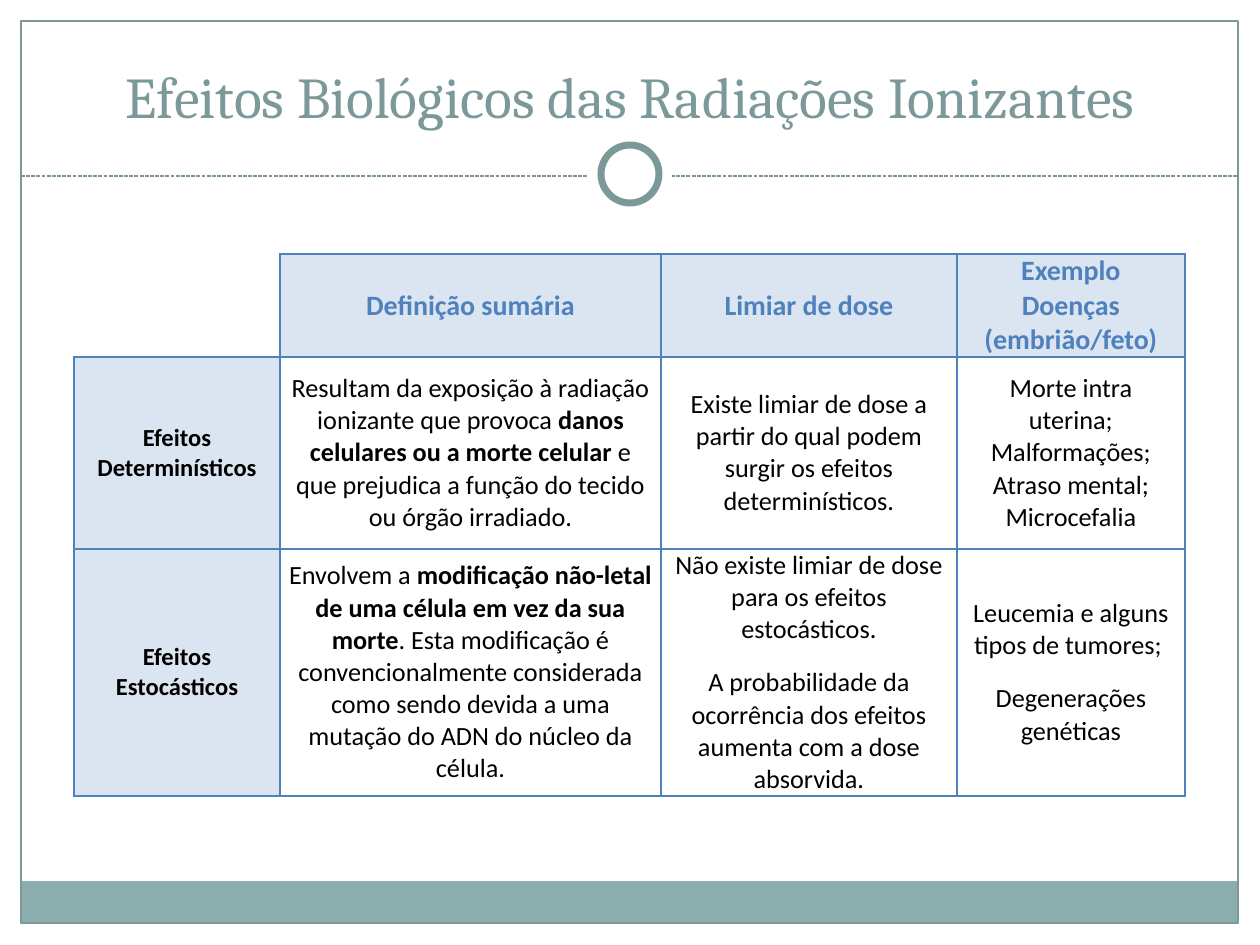
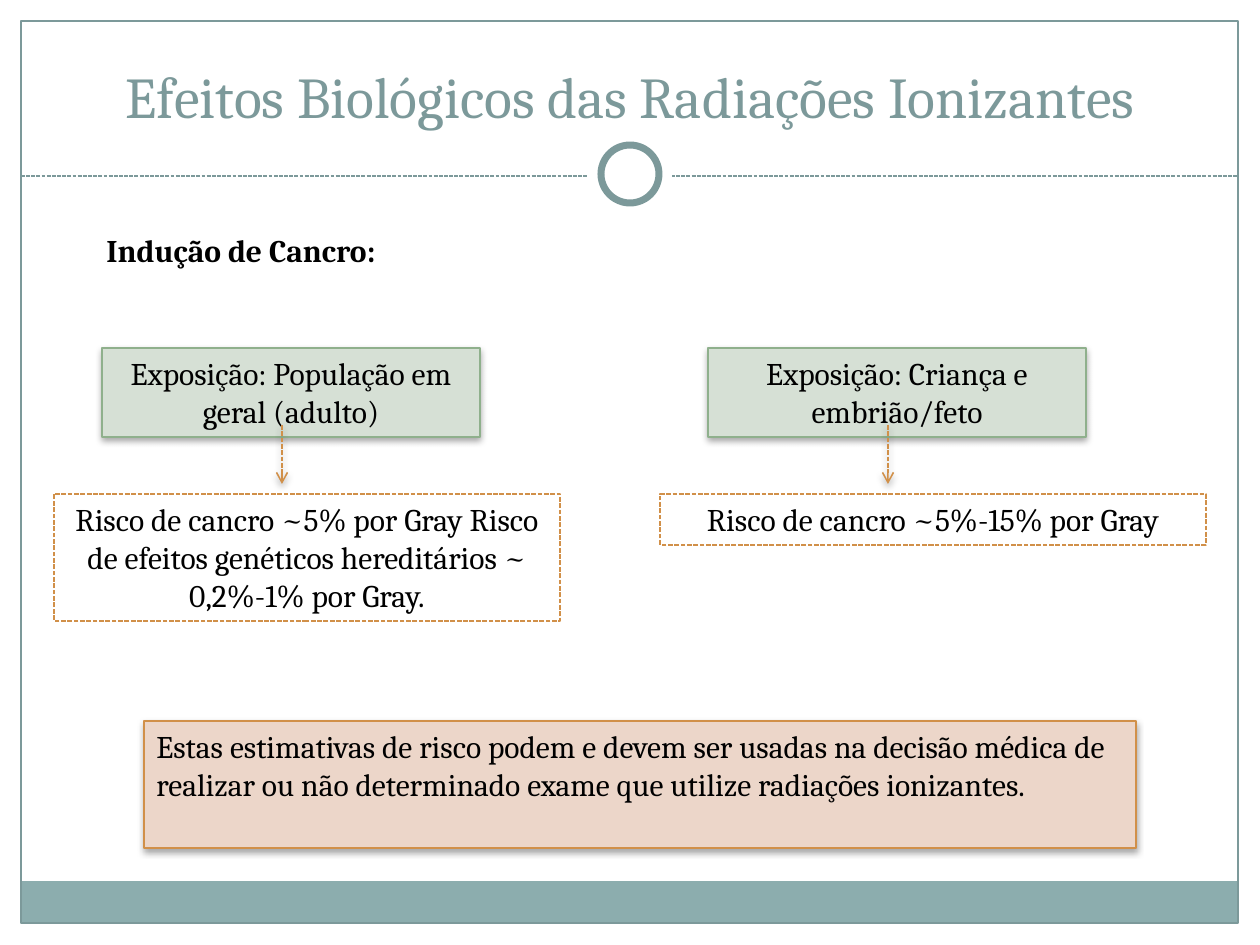
"""Build two slides on the biological effects of ionizing radiation."""
from dataclasses import dataclass
from typing import Any, NamedTuple

from lxml import etree
from pptx import Presentation
from pptx import util as u
from pptx.dml import color
from pptx.enum import dml, shapes, text
from pptx.oxml import ns

SCALE = 914400 / 126
TEAL, BAND, WHITE, BLACK = "7C999A", "8CADAE", "FFFFFF", "000000"
BLUE, PALE_BLUE = "4F81BD", "DBE5F1"
GREEN, PALE_GREEN = "8FB08C", "D6E0D5"
ORANGE, PALE_ORANGE = "D19049", "ECD6C9"
TITLE = "Efeitos Biológicos das Radiações Ionizantes"
CENTER, LEFT = text.PP_ALIGN.CENTER, text.PP_ALIGN.LEFT
MIDDLE, TOP, BOTTOM = text.MSO_ANCHOR.MIDDLE, text.MSO_ANCHOR.TOP, text.MSO_ANCHOR.BOTTOM


class Span(NamedTuple):
    words: str
    bold: bool = False


class Area(NamedTuple):
    left: int
    top: int
    width: int
    height: int


@dataclass(frozen=True)
class Type:
    size: int
    name: str = "Cambria"
    ink: str = BLACK
    align: Any = LEFT
    space: int = 0


@dataclass(frozen=True)
class Stroke:
    ink: str
    width: float = 0.75
    dashed: bool = False


@dataclass(frozen=True)
class Look:
    fill: str | None = None
    stroke: Stroke | None = None
    shadow: bool = False


class Exposure(NamedTuple):
    group: str
    risk: str
    risk_width: int
    risk_height: int


TITLE_TYPE = Type(33, ink=TEAL, align=CENTER)
BODY = Type(18)
BODY_CENTER = Type(18, align=CENTER)
HEADER = Type(16, "Calibri", BLUE, CENTER, 6)
LABEL = Type(14, "Calibri", align=CENTER, space=6)
CELL = Type(15, "Calibri", align=CENTER, space=6)
DASHED = Stroke(ORANGE, 0.9, True)
GROUP_LOOK = Look(PALE_GREEN, Stroke(GREEN), True)
RISK_LOOK = Look(WHITE, DASHED)
NOTE_LOOK = Look(PALE_ORANGE, Stroke(ORANGE), True)

COLUMNS = (206, 381, 296, 228)
ROWS = (103, 192, 247)
EFFECTS = [
    [
        [],
        [[Span("Definição sumária", True)]],
        [[Span("Limiar de dose", True)]],
        [[Span("Exemplo\nDoenças\n(embrião/feto)", True)]],
    ],
    [
        [[Span("Efeitos Determinísticos", True)]],
        [[
            Span("Resultam da exposição à radiação ionizante que provoca "),
            Span("danos celulares ou a morte celular", True),
            Span(" e que prejudica a função do tecido ou órgão irradiado."),
        ]],
        [[Span("Existe limiar de dose a partir do qual podem surgir os efeitos determinísticos.")]],
        [[Span("Morte intra uterina;\nMalformações;\nAtraso mental;\nMicrocefalia")]],
    ],
    [
        [[Span("Efeitos Estocásticos", True)]],
        [[
            Span("Envolvem a "),
            Span("modificação não-letal de uma célula em vez da sua morte", True),
            Span(". Esta modificação é convencionalmente considerada como sendo "
                 "devida a uma mutação do ADN do núcleo da célula."),
        ]],
        [
            [Span("Não existe limiar de dose para os efeitos estocásticos.")],
            [Span("A probabilidade da ocorrência dos efeitos aumenta com a dose absorvida.")],
        ],
        [
            [Span("Leucemia e alguns tipos de tumores; ")],
            [Span("Degenerações genéticas")],
        ],
    ],
]
EXPOSURES = [
    Exposure(
        "Exposição: População em geral (adulto)",
        "Risco de cancro ~5% por Gray Risco de efeitos genéticos hereditários ~ 0,2%-1% por Gray.",
        506, 127,
    ),
    Exposure("Exposição: Criança e embrião/feto", "Risco de cancro ~5%-15% por Gray", 546, 51),
]
EXPOSURE_STEP = 606


def px(length: int) -> u.Emu:
    """Turn pixels into EMU."""
    return u.Emu(round(length * SCALE))


def rgb(value: str) -> color.RGBColor:
    """Turn a hex string into a colour."""
    return color.RGBColor.from_string(value)


def assign(target: Any, values: dict[str, Any]) -> None:
    """Set each named attribute of the target."""
    for name, value in values.items():
        setattr(target, name, value)


def add_node(parent: Any, tag: str, **values: Any) -> Any:
    """Append a drawing element with its attributes."""
    attributes = {name: str(value) for name, value in values.items()}
    return etree.SubElement(parent, ns.qn(tag), attributes)


def write(frame: Any, paragraphs: list[list[Span]], style: Type) -> None:
    """Fill a text frame with styled paragraphs."""
    for index, spans in enumerate(paragraphs):
        para = frame.add_paragraph() if index else frame.paragraphs[0]
        assign(para, {
            "alignment": style.align,
            "space_before": u.Pt(style.space),
            "space_after": u.Pt(style.space),
        })
        for span in spans:
            for number, line in enumerate(span.words.split("\n")):
                if number:
                    para.add_line_break()
                run = para.add_run()
                run.text = line
                assign(run.font, {"size": u.Pt(style.size), "name": style.name, "bold": span.bold})
                run.font.color.rgb = rgb(style.ink)


def apply_stroke(line: Any, stroke: Stroke) -> None:
    """Draw a line format."""
    line.color.rgb = rgb(stroke.ink)
    line.width = u.Pt(stroke.width)
    if stroke.dashed:
        line.dash_style = dml.MSO_LINE.SQUARE_DOT


def add_shadow(effects: Any) -> None:
    """Add a soft shadow below the element."""
    shadow = add_node(effects, "a:outerShdw", blurRad=u.Pt(4), dist=u.Pt(2),
                      dir=5400000, rotWithShape=0)
    add_node(add_node(shadow, "a:srgbClr", val=BLACK), "a:alpha", val=35000)


def add_box(page: Any, area: Area, look: Look,
            kind: Any = shapes.MSO_SHAPE.RECTANGLE) -> Any:
    """Add a preset shape."""
    box = page.shapes.add_shape(kind, *map(px, area))
    if look.fill:
        box.fill.solid()
        box.fill.fore_color.rgb = rgb(look.fill)
    else:
        box.fill.background()
    if look.stroke:
        apply_stroke(box.line, look.stroke)
    else:
        box.line.fill.background()
    box.shadow.inherit = False
    if look.shadow:
        add_shadow(box.element.spPr.find(ns.qn("a:effectLst")))
    return box


def add_text(box: Any, words: str, style: Type, bold: bool = False, anchor: Any = TOP) -> None:
    """Write one wrapped paragraph into a box."""
    assign(box.text_frame, {"word_wrap": True, "vertical_anchor": anchor})
    write(box.text_frame, [[Span(words, bold)]], style)


def add_line(page: Any, start: tuple[int, int], end: tuple[int, int],
             stroke: Stroke, arrow: bool = False) -> None:
    """Add a straight line, or a shadowed arrow."""
    line = page.shapes.add_connector(shapes.MSO_CONNECTOR.STRAIGHT, *map(px, start + end))
    apply_stroke(line.line, stroke)
    effects = add_node(line.element.spPr, "a:effectLst")
    if arrow:
        add_node(line.element.spPr.find(ns.qn("a:ln")), "a:tailEnd", type="arrow")
        add_shadow(effects)


def add_page(deck: Any) -> Any:
    """Add a slide with the shared frame, ring and title."""
    page = deck.slides.add_slide(deck.slide_layouts[6])
    oval = shapes.MSO_SHAPE.OVAL
    add_box(page, Area(21, 881, 1217, 43), Look(BAND))
    add_box(page, Area(21, 21, 1217, 902), Look(stroke=Stroke(TEAL)))
    add_line(page, (21, 176), (1238, 176), Stroke(TEAL, dashed=True))
    add_box(page, Area(588, 132, 84, 84), Look(WHITE), oval)
    add_box(page, Area(601, 145, 58, 58), Look(WHITE, Stroke(TEAL, 4)), oval)
    title = page.shapes.add_textbox(*map(px, Area(42, 31, 1176, 105)))
    add_text(title, TITLE, TITLE_TYPE, anchor=BOTTOM)
    return page


def format_cell(cell: Any, row: int, column: int) -> None:
    """Set the borders, fill, margins and words of one cell."""
    for side in "LRTB" if row or column else "RB":
        border = add_node(cell._tc.get_or_add_tcPr(), f"a:ln{side}", w=u.Pt(1))
        add_node(add_node(border, "a:solidFill"), "a:srgbClr", val=BLUE)
    if (row == 0) != (column == 0):
        cell.fill.solid()
        cell.fill.fore_color.rgb = rgb(PALE_BLUE)
    else:
        cell.fill.background()
    assign(cell, {
        "vertical_anchor": MIDDLE,
        "margin_left": px(9), "margin_right": px(9),
        "margin_top": 0, "margin_bottom": 0,
    })
    style = HEADER if row == 0 else LABEL if column == 0 else CELL
    write(cell.text_frame, EFFECTS[row][column], style)


def add_effects_page(deck: Any) -> None:
    """Add the table that compares the two kinds of effect."""
    page = add_page(deck)
    area = Area(74, 254, sum(COLUMNS), sum(ROWS))
    table = page.shapes.add_table(len(ROWS), len(COLUMNS), *map(px, area)).table
    assign(table, {"first_row": False, "horz_banding": False})
    for column, width in zip(table.columns, COLUMNS):
        column.width = px(width)
    for index, height in enumerate(ROWS):
        table.rows[index].height = px(height)
        for column in range(len(COLUMNS)):
            format_cell(table.cell(index, column), index, column)


def add_cancer_page(deck: Any) -> None:
    """Add the cancer risk of each exposed group."""
    page = add_page(deck)
    heading = page.shapes.add_textbox(*map(px, Area(94, 225, 506, 51)))
    add_text(heading, "Indução de Cancro:", BODY, bold=True)
    for index, exposure in enumerate(EXPOSURES):
        shift = index * EXPOSURE_STEP
        group = add_box(page, Area(102 + shift, 348, 378, 89), GROUP_LOOK)
        add_text(group, exposure.group, BODY_CENTER)
        area = Area(54 + shift, 494, exposure.risk_width, exposure.risk_height)
        add_text(add_box(page, area, RISK_LOOK), exposure.risk, BODY_CENTER)
        add_line(page, (282 + shift, 425), (282 + shift, 484), DASHED, arrow=True)
    note = add_box(page, Area(144, 721, 992, 127), NOTE_LOOK)
    add_text(note, "Estas estimativas de risco podem e devem ser usadas na decisão médica de "
             "realizar ou não determinado exame que utilize radiações ionizantes.", BODY)


def main() -> None:
    """Build and save the deck."""
    deck = Presentation()
    assign(deck, {"slide_width": px(1260), "slide_height": px(945)})
    add_effects_page(deck)
    add_cancer_page(deck)
    deck.save("out.pptx")


if __name__ == "__main__":
    main()
